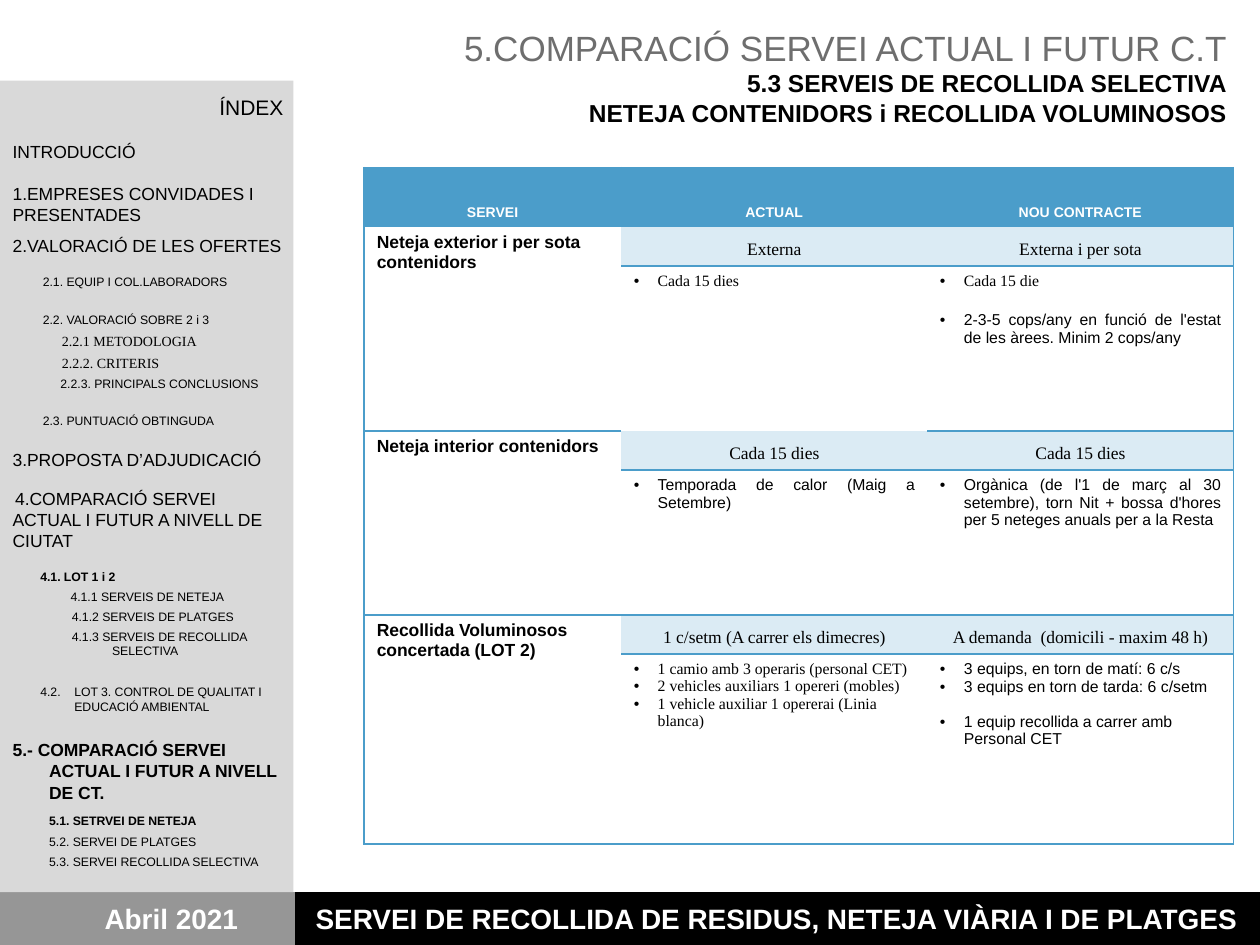
from lxml.etree import SubElement
from pptx import Presentation
from pptx.dml.color import RGBColor
from pptx.enum.shapes import MSO_SHAPE
from pptx.enum.text import MSO_ANCHOR, MSO_AUTO_SIZE, PP_ALIGN
from pptx.oxml.ns import qn
from pptx.util import Inches, Pt

COLORS = {
    "black": "000000", "white": "FFFFFF", "grey": "969696", "side": "D9D9D9",
    "title": "6E6E6E", "blue": "4B9DCA", "pale": "DBEBF4",
}
SANS, SERIF = "Arial", "Times New Roman"

# Index entries: text, size, bold, space before, left indent, first-line indent
INDEX = [
    ("INTRODUCCIÓ", 10, False, 12, 0, 0),
    ("1.EMPRESES CONVIDADES I PRESENTADES", 10, False, 12, 0, 0),
    ("2.VALORACIÓ DE LES OFERTES", 10, False, 6, 0, 0),
    ("2.1. EQUIP I COL.LABORADORS", 7, False, 10.5, 0.24, 0),
    ("2.2. VALORACIÓ SOBRE 2 i 3", 7, False, 13, 0.24, 0),
    ("2.2.1 METODOLOGIA", 8, False, 3, 0.39, 0),
    ("2.2.2. CRITERIS", 8, False, 3, 0.39, 0),
    ("2.2.3. PRINCIPALS CONCLUSIONS", 7, False, 3, 0.38, 0),
    ("2.3. PUNTUACIÓ OBTINGUDA", 7, False, 13, 0.24, 0),
    ("3.PROPOSTA D’ADJUDICACIÓ", 10, False, 12, 0, 0),
    ("4.COMPARACIÓ SERVEI ACTUAL I FUTUR A NIVELL DE CIUTAT", 10, False, 10, 0, 0.02),
    ("4.1. LOT 1 i 2", 7, True, 10.5, 0.22, 0),
    ("4.1.1 SERVEIS DE NETEJA", 7, False, 3, 0.46, 0),
    ("4.1.2 SERVEIS DE PLATGES", 7, False, 3, 0.47, 0),
    ("4.1.3 SERVEIS DE RECOLLIDA SELECTIVA", 7, False, 3, 0.79, -0.32),
    ("4.2.\tLOT 3. CONTROL DE QUALITAT I EDUCACIÓ AMBIENTAL", 7, False, 15, 0.49, -0.27),
    ("5.- COMPARACIÓ SERVEI ACTUAL I FUTUR A NIVELL DE CT.", 10, True, 14.5, 0.29, -0.29),
    ("5.1. SETRVEI DE NETEJA", 7, True, 6, 0.29, 0),
    ("5.2. SERVEI DE PLATGES", 7, False, 3.5, 0.29, 0),
    ("5.3. SERVEI RECOLLIDA SELECTIVA", 7, False, 3.5, 0.29, 0),
]

ROW_HEIGHTS = [0.47, 0.31, 0.31, 1, 0.31, 1.15, 0.31, 0.85, 0.66]
COL_WIDTHS = [2.04, 2.43, 2.43]
# First row, column and last row of each merged cell
MERGES = [(1, 0, 3), (2, 1, 3), (4, 0, 5), (6, 0, 8)]
# Row boundaries that carry a line, by column
RULES = [{0, 1, 4, 6, 9}, {0, 1, 2, 5, 6, 7, 9}, {0, 1, 2, 4, 5, 6, 7, 9}]

HEADERS = ["SERVEI", "ACTUAL", "NOU CONTRACTE"]
# Row: service, current level, new level
SERVICES = {
    1: ("Neteja exterior i per sota contenidors", "Externa", "Externa i per sota"),
    4: ("Neteja interior contenidors", "Cada 15 dies", "Cada 15 dies"),
    6: ("Recollida Voluminosos concertada (LOT 2)", "1 c/setm (A carrer els dimecres)",
        "A demanda  (domicili - maxim 48 h)"),
}
# Row, column, font, alignment, bullets with the space before each
DETAILS = [
    (2, 1, SERIF, PP_ALIGN.JUSTIFY, [("Cada 15 dies", 0)]),
    (2, 2, SERIF, PP_ALIGN.JUSTIFY, [("Cada 15 die", 0)]),
    (3, 2, SANS, PP_ALIGN.JUSTIFY,
     [("2-3-5 cops/any en funció de l'estat de les àrees. Minim 2 cops/any", 0)]),
    (5, 1, SANS, PP_ALIGN.JUSTIFY, [("Temporada de calor (Maig a Setembre)", 0)]),
    (5, 2, SANS, PP_ALIGN.JUSTIFY,
     [("Orgànica (de l'1 de març al 30 setembre), torn Nit + bossa d'hores "
       "per 5 neteges anuals per a la Resta", 0)]),
    (7, 1, SERIF, PP_ALIGN.LEFT,
     [("1 camio amb 3 operaris (personal CET)", 0),
      ("2 vehicles auxiliars 1 opereri (mobles)", 0),
      ("1 vehicle auxiliar 1 opererai (Linia blanca)", 0)]),
    (7, 2, SANS, PP_ALIGN.LEFT,
     [("3 equips, en torn de matí: 6 c/s", 0),
      ("3 equips en torn de tarda: 6 c/setm", 0),
      ("1 equip recollida a carrer amb Personal CET", 10)]),
]


def rgb(name):
    return RGBColor.from_string(COLORS[name])


def add_paragraph(tf, text, size, bold=False, color="black", font=SANS,
                  align=PP_ALIGN.LEFT, before=0, left=0, first=0, bullet=None):
    """Fill the empty first paragraph, or append a new one."""
    p = tf.paragraphs[0]
    if p.runs:
        p = tf.add_paragraph()
    pPr = p._p.get_or_add_pPr()
    pPr.set("marL", str(Inches(left)))
    pPr.set("indent", str(Inches(first)))
    if bullet:
        SubElement(pPr, qn("a:buFont")).set("typeface", SANS)
        SubElement(pPr, qn("a:buChar")).set("char", bullet)
    else:
        SubElement(pPr, qn("a:buNone"))
    p.alignment = align
    p.space_before, p.space_after = Pt(before), Pt(0)
    r = p.add_run()
    r.text = text
    r.font.name, r.font.size, r.font.bold = font, Pt(size), bold
    r.font.color.rgb = rgb(color)


def add_band(s, x, y, w, h, color):
    sp = s.shapes.add_shape(MSO_SHAPE.RECTANGLE, Inches(x), Inches(y), Inches(w), Inches(h))
    sp.shadow.inherit = False
    sp.fill.solid()
    sp.fill.fore_color.rgb = rgb(color)
    sp.line.fill.background()
    tf = sp.text_frame
    tf.vertical_anchor = MSO_ANCHOR.MIDDLE
    tf.margin_left = tf.margin_right = Inches(0.1)
    return tf


def place(sp, x, y, w, h):
    sp.left, sp.top, sp.width, sp.height = Inches(x), Inches(y), Inches(w), Inches(h)
    tf = sp.text_frame
    tf.word_wrap = True
    tf.auto_size = MSO_AUTO_SIZE.NONE
    tf.vertical_anchor = MSO_ANCHOR.TOP
    return tf


def set_border(cell, sides):
    """Draw the named sides in blue and leave the others without a line."""
    tcPr = cell._tc.get_or_add_tcPr()
    for i, side in enumerate("LRTB"):
        ln = SubElement(tcPr, qn("a:ln" + side), w=str(Pt(1)))
        if side in sides:
            fill = SubElement(ln, qn("a:solidFill"))
            SubElement(fill, qn("a:srgbClr"), val=COLORS["blue"])
        else:
            SubElement(ln, qn("a:noFill"))
        tcPr.insert(i, ln)


def format_cell(cell, row, col):
    color = "blue" if row == 0 else "pale" if row in SERVICES and col else "white"
    cell.fill.solid()
    cell.fill.fore_color.rgb = rgb(color)
    cell.vertical_anchor = MSO_ANCHOR.TOP if color == "white" else MSO_ANCHOR.BOTTOM
    end = row + (cell.span_height if cell.is_merge_origin else 1)
    sides = {"T"} if row in RULES[col] else set()
    if end in RULES[col]:
        sides.add("B")
    if row == 0 or col == 0:
        sides.add("L")
    if row == 0 or col == 2:
        sides.add("R")
    set_border(cell, sides)


def add_services_table(s):
    frame = s.shapes.add_table(len(ROW_HEIGHTS), len(COL_WIDTHS), Inches(2.89), Inches(1.33),
                               Inches(sum(COL_WIDTHS)), Inches(sum(ROW_HEIGHTS)))
    table = frame.table
    for column, width in zip(table.columns, COL_WIDTHS):
        column.width = Inches(width)
    for row, height in zip(table.rows, ROW_HEIGHTS):
        row.height = Inches(height)
    for top, col, bottom in MERGES:
        table.cell(top, col).merge(table.cell(bottom, col))
    for row in range(len(ROW_HEIGHTS)):
        for col in range(len(COL_WIDTHS)):
            format_cell(table.cell(row, col), row, col)

    for col, text in enumerate(HEADERS):
        add_paragraph(table.cell(0, col).text_frame, text, 8, True, "white",
                      align=PP_ALIGN.CENTER)
    for row, (service, *levels) in SERVICES.items():
        add_paragraph(table.cell(row, 0).text_frame, service, 10, True)
        for col, text in enumerate(levels, 1):
            add_paragraph(table.cell(row, col).text_frame, text, 10, font=SERIF,
                          align=PP_ALIGN.CENTER)
    for row, col, font, align, items in DETAILS:
        for text, before in items:
            add_paragraph(table.cell(row, col).text_frame, text, 9, font=font, align=align,
                          before=before, left=0.19, first=-0.19, bullet="•")


def main():
    prs = Presentation()
    prs.slide_width, prs.slide_height = Inches(10), Inches(7.5)
    s = prs.slides.add_slide(prs.slide_layouts[1])
    title, body = s.placeholders

    # Footer bands and sidebar
    tf = add_band(s, 2.33, 7.08, 7.67, 0.42, "black")
    add_paragraph(tf, "SERVEI DE RECOLLIDA DE RESIDUS, NETEJA VIÀRIA I DE PLATGES", 16, True,
                  "white", align=PP_ALIGN.CENTER)
    tf = add_band(s, 0, 7.08, 2.34, 0.42, "grey")
    add_paragraph(tf, "Abril 2021", 16, True, "white", align=PP_ALIGN.CENTER, left=0.38)
    add_band(s, 0, 0.64, 2.33, 6.44, "side")

    # Title and index, in front of the bands
    for sp in (title, body):
        s.shapes._spTree.append(sp._element)
    tf = place(title, 2.97, 0.16, 6.87, 0.9)
    add_paragraph(tf, "5.COMPARACIÓ SERVEI ACTUAL I FUTUR C.T", 20, color="title",
                  align=PP_ALIGN.RIGHT)
    for text in ("5.3 SERVEIS DE RECOLLIDA SELECTIVA",
                 "NETEJA CONTENIDORS i RECOLLIDA VOLUMINOSOS"):
        add_paragraph(tf, text, 14, True, align=PP_ALIGN.RIGHT)
    tf = place(body, 0, 0.7, 2.35, 6.35)
    add_paragraph(tf, "ÍNDEX", 12, align=PP_ALIGN.RIGHT)
    for text, size, bold, before, left, first in INDEX:
        add_paragraph(tf, text, size, bold, font=SERIF if size == 8 else SANS,
                      before=before, left=left, first=first)

    # Comparison of services
    add_services_table(s)
    prs.save("out.pptx")


if __name__ == "__main__":
    main()
